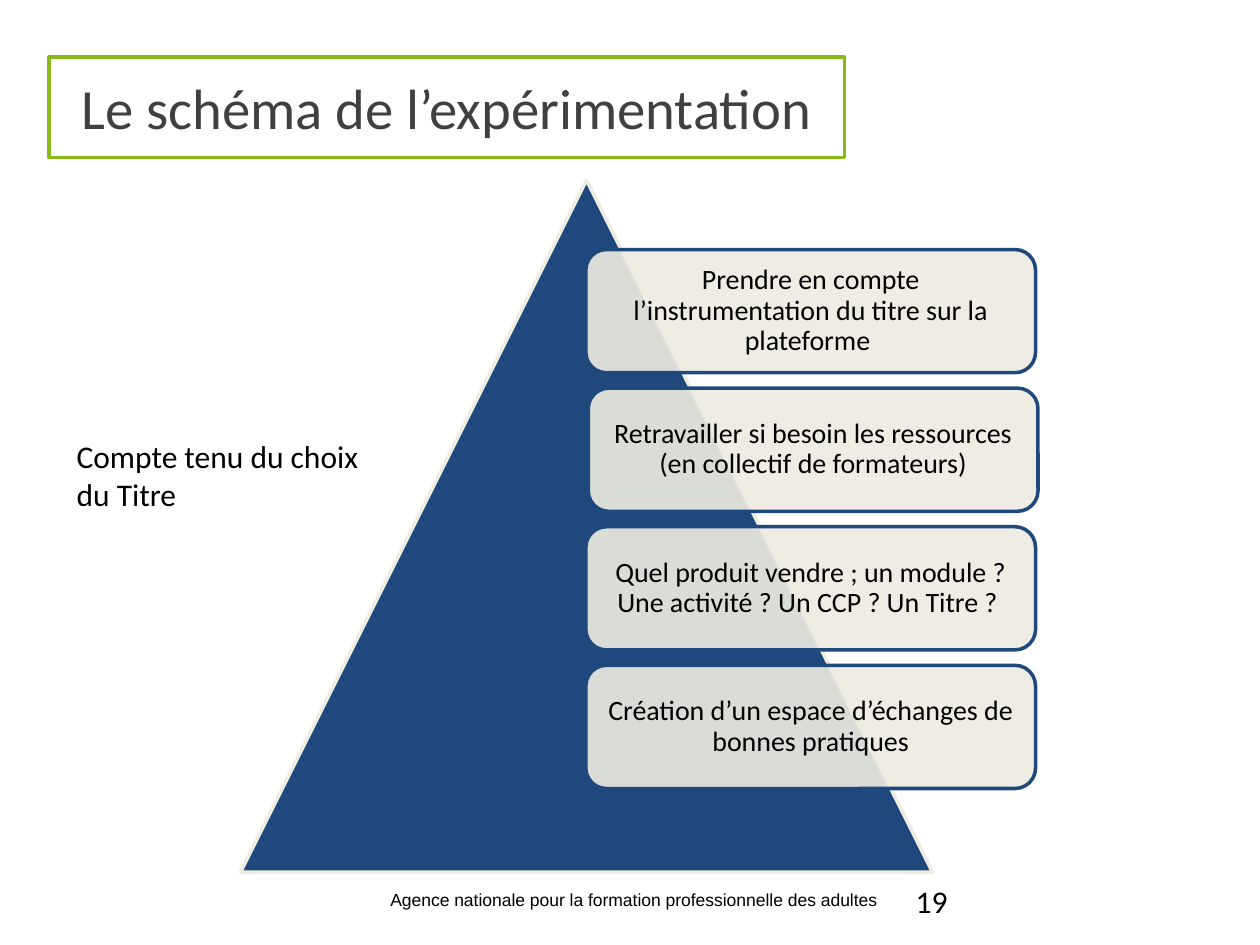
from dataclasses import dataclass

from lxml.etree import SubElement
from pptx import Presentation
from pptx.dml.color import RGBColor
from pptx.enum.shapes import MSO_SHAPE
from pptx.enum.text import MSO_ANCHOR, MSO_AUTO_SIZE, PP_ALIGN
from pptx.oxml.ns import qn
from pptx.shapes.autoshape import Shape
from pptx.slide import Slide
from pptx.util import Pt

NAVY, CREAM, GREEN = "1F497D", "EEECE1", "89BA17"
WHITE, BLACK, GREY = "FFFFFF", "000000", "404040"
PITCH = 79.2


@dataclass
class Box:
    left: float
    top: float
    width: float
    height: float

    def points(self) -> list[Pt]:
        return [Pt(n) for n in (self.left, self.top, self.width, self.height)]


@dataclass
class Label:
    text: str
    box: Box
    size: float
    font: str = "Calibri"
    align: PP_ALIGN = PP_ALIGN.LEFT


@dataclass
class Step:
    text: str
    shift: float = 0


LABELS = [
    Label("Agence nationale pour la formation professionnelle des adultes",
          Box(15, 504.7, 694, 19.4), 10, "Arial", PP_ALIGN.CENTER),
    Label("19", Box(516.2, 500.4, 167.8, 28.8), 18),
    Label("Compte tenu du choix du Titre", Box(36.7, 246.2, 193.7, 72.7), 18),
]
STEPS = [
    Step("Prendre en compte l’instrumentation du titre sur la plateforme "),
    Step("Retravailler si besoin les ressources (en collectif de formateurs)", 1.4),
    Step("Quel produit vendre ; un module ? Une activité ? Un CCP ? Un Titre ? "),
    Step("Création d’un espace d’échanges de bonnes pratiques"),
]


def apply(target: object, values: dict) -> None:
    for name, value in values.items():
        setattr(target, name, value)


def paint(part: object, color: str) -> None:
    if hasattr(part, "solid"):
        part.solid()
        part = part.fore_color
    else:
        part = part.color
    part.rgb = RGBColor.from_string(color)


def dress(shape: Shape, fill: str, line: str) -> None:
    shape.shadow.inherit = False
    paint(shape.fill, fill)
    paint(shape.line, line)
    shape.line.width = Pt(2)


def write(shape: Shape, text: str, size: float, color: str, font: str,
          frame: dict, para: dict) -> None:
    apply(shape.text_frame, {"text": text, "word_wrap": True, **frame})
    line = shape.text_frame.paragraphs[0]
    apply(line, para)
    run = line.runs[0].font
    apply(run, {"size": Pt(size), "name": font, "bold": False})
    paint(run, color)


def draw_title(slide: Slide) -> None:
    title = slide.shapes.title
    apply(title, dict(zip(("left", "top", "width", "height"),
                          Box(28, 32.5, 454.5, 57.6).points())))
    dress(title, WHITE, GREEN)
    write(title, "Le schéma de l’expérimentation", 32.4, GREY, "Calibri",
          {"vertical_anchor": MSO_ANCHOR.MIDDLE, "auto_size": MSO_AUTO_SIZE.NONE},
          {"alignment": PP_ALIGN.CENTER})


def draw_label(slide: Slide, label: Label) -> None:
    shape = slide.shapes.add_textbox(*label.box.points())
    write(shape, label.text, label.size, BLACK, label.font,
          {"vertical_anchor": MSO_ANCHOR.TOP}, {"alignment": label.align})


def draw_step(slide: Slide, step: Step, row: int) -> None:
    box = Box(334.8 + step.shift, 142.6 + row * PITCH, 257, 70.4)
    shape = slide.shapes.add_shape(MSO_SHAPE.ROUNDED_RECTANGLE, *box.points())
    dress(shape, CREAM, NAVY)
    tint = shape.fill._xPr.find(qn("a:solidFill"))[0]
    SubElement(tint, qn("a:alpha"), val="90000")
    sides = ("left", "top", "right", "bottom")
    write(shape, step.text, 16, BLACK, "Calibri",
          {"vertical_anchor": MSO_ANCHOR.MIDDLE,
           **{f"margin_{side}": Pt(5) for side in sides}},
          {"alignment": PP_ALIGN.CENTER, "line_spacing": 0.9})


def main() -> None:
    deck = Presentation()
    apply(deck, {"slide_width": Pt(720), "slide_height": Pt(540)})
    slide = deck.slides.add_slide(deck.slide_layouts[5])
    draw_title(slide)
    peak = slide.shapes.add_shape(MSO_SHAPE.ISOSCELES_TRIANGLE,
                                  *Box(137.5, 103, 395.3, 395.3).points())
    dress(peak, NAVY, CREAM)
    for row, step in enumerate(STEPS):
        draw_step(slide, step, row)
    for label in LABELS:
        draw_label(slide, label)
    deck.save("out.pptx")


if __name__ == "__main__":
    main()
